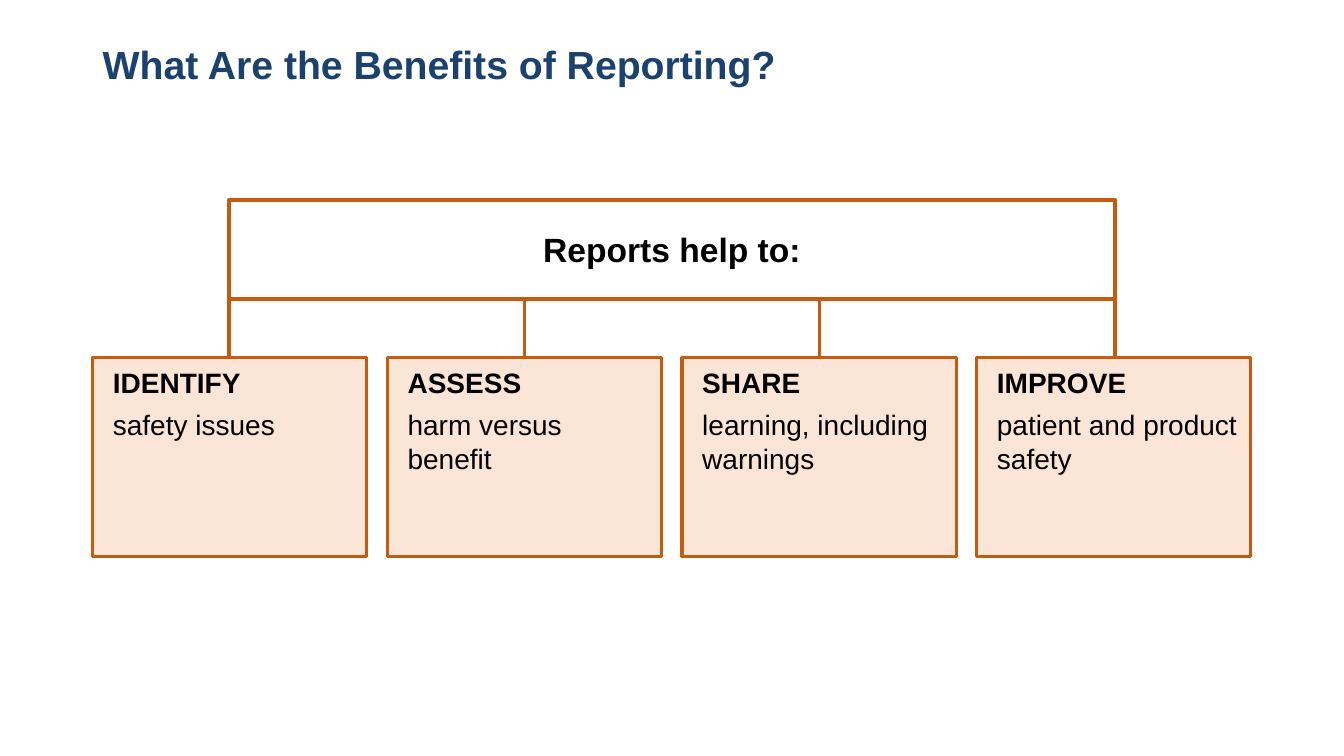
"""Build a slide that shows four benefits of reporting."""
from lxml.etree import SubElement
from pptx import Presentation
from pptx.dml.color import RGBColor
from pptx.enum.shapes import MSO_CONNECTOR, MSO_SHAPE
from pptx.enum.text import MSO_ANCHOR, PP_ALIGN
from pptx.oxml.ns import qn
from pptx.util import Pt

TITLE = "What Are the Benefits of Reporting?"
HEAD = "Reports help to:"
CARDS = [
    ("IDENTIFY", "safety issues", 7.2),
    ("ASSESS", "harm versus benefit", 7.2),
    ("SHARE", "learning, including warnings", 8.6),
    ("IMPROVE", "patient and product safety", 2.9),
]

FONT = "Arial"
NAVY = RGBColor(0x1B, 0x41, 0x6F)
RUST = RGBColor(0xC5, 0x5A, 0x11)
PEACH = RGBColor(0xFB, 0xE5, 0xD6)
WHITE = RGBColor(0xFF, 0xFF, 0xFF)
BLACK = RGBColor(0, 0, 0)

HEAD_X, HEAD_Y, HEAD_W, HEAD_H = 163.6, 142.6, 632.8, 71
CARD_X, CARD_Y, CARD_W, CARD_H = 66.2, 255.6, 195.8, 141.8
CARD_STEP = 210.5
STEM_STEP = HEAD_W / (len(CARDS) - 1)


def add_run(para, text, size, color=BLACK, bold=True):
    """Add one styled run to a paragraph."""
    run = para.add_run()
    run.text = text
    font = run.font
    font.name, font.size, font.bold = FONT, Pt(size), bold
    font.color.rgb = color


def add_box(slide, x, y, w, h, fill, width):
    """Draw a framed box and return its text frame."""
    box = slide.shapes.add_shape(MSO_SHAPE.RECTANGLE, Pt(x), Pt(y), Pt(w), Pt(h))
    box.shadow.inherit = False
    box.fill.solid()
    box.fill.fore_color.rgb = fill
    box.line.color.rgb = RUST
    box.line.width = Pt(width)
    frame = box.text_frame
    frame.word_wrap = True
    return frame


def add_stem(slide, x):
    """Draw a line from the head box down to a card."""
    stem = slide.shapes.add_connector(
        MSO_CONNECTOR.STRAIGHT, Pt(x), Pt(HEAD_Y + HEAD_H), Pt(x), Pt(CARD_Y))
    stem.line.color.rgb = RUST
    stem.line.width = Pt(2.25)
    SubElement(stem._element.spPr, qn("a:effectLst"))


def add_card(slide, x, word, text, right):
    """Draw a card with a bold word above its text."""
    frame = add_box(slide, x, CARD_Y, CARD_W, CARD_H, PEACH, 2.25)
    frame.vertical_anchor = MSO_ANCHOR.TOP
    frame.margin_left, frame.margin_right = Pt(14.4), Pt(right)
    frame.margin_top, frame.margin_bottom = Pt(5.8), Pt(20.2)
    first, second = frame.paragraphs[0], frame.add_paragraph()
    for para, line, bold in ((first, word, True), (second, text, False)):
        para.alignment = PP_ALIGN.LEFT
        para.space_before = Pt(6)
        add_run(para, line, 20, bold=bold)


def add_title(slide):
    """Place and fill the title."""
    title = slide.shapes.title
    title.left, title.top = Pt(66.2), Pt(28.8)
    title.width, title.height = Pt(828), Pt(104.4)
    frame = title.text_frame
    frame.word_wrap = True
    frame.vertical_anchor = MSO_ANCHOR.TOP
    para = frame.paragraphs[0]
    para.alignment = PP_ALIGN.LEFT
    para.line_spacing = 0.9
    add_run(para, TITLE, 28, NAVY)


def main():
    """Build and save the deck."""
    deck = Presentation()
    deck.slide_width, deck.slide_height = Pt(960), Pt(540)
    slide = deck.slides.add_slide(deck.slide_layouts[5])
    add_title(slide)
    for i in range(len(CARDS)):
        add_stem(slide, HEAD_X + i * STEM_STEP)
    for i, card in enumerate(CARDS):
        add_card(slide, CARD_X + i * CARD_STEP, *card)
    frame = add_box(slide, HEAD_X, HEAD_Y, HEAD_W, HEAD_H, WHITE, 3)
    frame.vertical_anchor = MSO_ANCHOR.MIDDLE
    para = frame.paragraphs[0]
    para.alignment = PP_ALIGN.CENTER
    add_run(para, HEAD, 24)
    deck.save("out.pptx")


if __name__ == "__main__":
    main()
